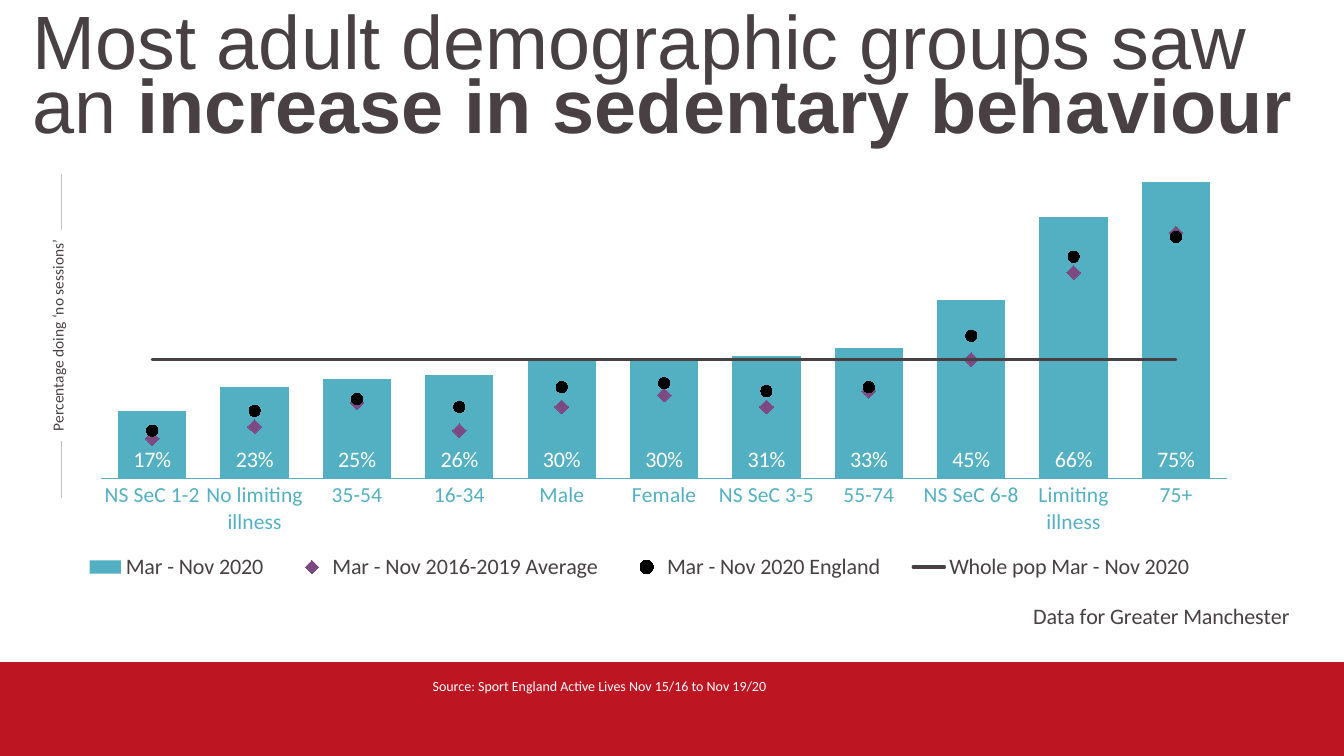
from dataclasses import dataclass

from lxml.etree import SubElement
from pptx import Presentation
from pptx.chart.data import CategoryChartData
from pptx.dml.color import RGBColor
from pptx.enum.chart import (XL_CHART_TYPE, XL_LABEL_POSITION, XL_LEGEND_POSITION,
                             XL_MARKER_STYLE, XL_TICK_LABEL_POSITION, XL_TICK_MARK)
from pptx.enum.shapes import MSO_CONNECTOR, MSO_SHAPE
from pptx.enum.text import MSO_ANCHOR, PP_ALIGN
from pptx.oxml import parse_xml
from pptx.oxml.ns import nsdecls, qn
from pptx.util import Pt


@dataclass(frozen=True)
class Theme:
    ink: RGBColor = RGBColor(0x48, 0x40, 0x43)
    teal: RGBColor = RGBColor(0x53, 0xB0, 0xC2)
    purple: RGBColor = RGBColor(0x7C, 0x49, 0x82)
    red: RGBColor = RGBColor(0xBD, 0x16, 0x22)
    rule: RGBColor = RGBColor(0xBF, 0xBF, 0xBF)
    black: RGBColor = RGBColor(0, 0, 0)
    white: RGBColor = RGBColor(0xFF, 0xFF, 0xFF)
    heading_font: str = "Arial"
    body_font: str = "Calibri"
    heading: Pt = Pt(54)
    chart_text: Pt = Pt(16)
    category: Pt = Pt(15.5)
    axis_note: Pt = Pt(11)
    source: Pt = Pt(10)


THEME = Theme()

CATEGORIES = ["NS SeC 1-2", "No limiting illness", "35-54", "16-34", "Male", "Female",
              "NS SeC 3-5", "55-74", "NS SeC 6-8", "Limiting illness", "75+"]
SERIES = {
    "Mar - Nov 2020": [0.17, 0.23, 0.25, 0.26, 0.3, 0.3, 0.31, 0.33, 0.45, 0.66, 0.75],
    "Mar - Nov 2016-2019 Average":
        [0.1, 0.13, 0.19, 0.12, 0.18, 0.21, 0.18, 0.22, 0.3, 0.52, 0.62],
    "Mar - Nov 2020 England":
        [0.12, 0.17, 0.2, 0.18, 0.23, 0.24, 0.22, 0.23, 0.36, 0.56, 0.61],
    "Whole pop Mar - Nov 2020": [0.3] * len(CATEGORIES),
}


def set_attributes(target, values):
    for name, value in values.items():
        setattr(target, name, value)


def set_font(font, size, color, name=THEME.body_font, bold=False):
    set_attributes(font, {"size": size, "name": name, "bold": bold})
    font.color.rgb = color
    font._element.set("kern", "1200")


def add_rectangle(slide, box, color):
    shape = slide.shapes.add_shape(MSO_SHAPE.RECTANGLE, *map(Pt, box))
    shape.shadow.inherit = False
    shape.fill.solid()
    shape.fill.fore_color.rgb = color
    shape.line.fill.background()
    return shape


def add_text(slide, box, runs, size, color, font_name, line_spacing):
    frame = slide.shapes.add_textbox(*map(Pt, box)).text_frame
    set_attributes(frame, {"word_wrap": True, "vertical_anchor": MSO_ANCHOR.TOP})
    paragraph = frame.paragraphs[0]
    paragraph.line_spacing = line_spacing
    for text, bold in runs:
        run = paragraph.add_run()
        run.text = text
        set_font(run.font, size, color, font_name, bold)


def add_axis_note(slide, text):
    # Thin rule, interrupted by the rotated label
    line = slide.shapes.add_connector(MSO_CONNECTOR.STRAIGHT, Pt(44), Pt(124), Pt(44), Pt(356))
    line.line.color.rgb = THEME.rule
    line.line.width = Pt(0.5)
    SubElement(line.element.spPr, qn("a:effectLst"))

    frame = add_rectangle(slide, (31, 164, 28, 151), THEME.white).text_frame
    set_attributes(frame, {"word_wrap": True, "vertical_anchor": MSO_ANCHOR.TOP})
    frame._txBody.bodyPr.set("vert", "vert270")
    paragraph = frame.paragraphs[0]
    paragraph.alignment = PP_ALIGN.CENTER
    run = paragraph.add_run()
    run.text = text
    set_font(run.font, THEME.axis_note, THEME.ink)


def place(element, **fractions):
    """Give a chart part a manual layout, in fractions of the chart."""
    for layout in element.findall(qn("c:layout")):
        element.remove(layout)
    is_plot = "plotArea" in element.tag
    target = '<c:layoutTarget val="inner"/>' if is_plot else ""
    modes = "".join(f'<c:{key}Mode val="edge"/>' for key in "xy")
    sizes = "".join(f'<c:{key} val="{value}"/>' for key, value in fractions.items())
    layout = parse_xml(f'<c:layout {nsdecls("c")}><c:manualLayout>{target}{modes}{sizes}'
                       '</c:manualLayout></c:layout>')
    if is_plot:
        element.insert(0, layout)
    else:
        element.find(qn("c:overlay")).addprevious(layout)


def move_to_line_plot(chart):
    """Move every series but the first onto a line plot sharing the axes."""
    bar_plot = chart.element.find(".//" + qn("c:barChart"))
    line_plot = parse_xml(f'<c:lineChart {nsdecls("c")}><c:grouping val="standard"/>'
                          '<c:varyColors val="0"/></c:lineChart>')
    for series in bar_plot.findall(qn("c:ser"))[1:]:
        for flag in series.findall(qn("c:invertIfNegative")):
            series.remove(flag)
        line_plot.append(series)
    SubElement(line_plot, qn("c:marker")).set("val", "1")
    for axis in bar_plot.findall(qn("c:axId")):
        SubElement(line_plot, qn("c:axId")).set("val", axis.get("val"))
    bar_plot.addnext(line_plot)


def format_bars(plot):
    set_attributes(plot, {"gap_width": 50, "overlap": -27, "vary_by_categories": False,
                          "has_data_labels": True})
    fill = plot.series[0].format.fill
    fill.solid()
    fill.fore_color.rgb = THEME.teal
    labels = plot.data_labels
    set_attributes(labels, {"show_value": True, "number_format": "0%",
                            "number_format_is_linked": False,
                            "position": XL_LABEL_POSITION.INSIDE_BASE})
    set_font(labels.font, THEME.chart_text, THEME.white)


def format_lines(plot):
    average, england, population = plot.series
    markers = [(average, XL_MARKER_STYLE.DIAMOND, 10, THEME.purple),
               (england, XL_MARKER_STYLE.CIRCLE, 8, THEME.black)]
    for series, style, size, color in markers:
        series.smooth = False
        series.format.line.fill.background()
        set_attributes(series.marker, {"style": style, "size": size})
        series.marker.format.fill.solid()
        series.marker.format.fill.fore_color.rgb = color
        series.marker.format.line.fill.background()
    population.smooth = False
    population.marker.style = XL_MARKER_STYLE.NONE
    line = population.format.line
    line.color.rgb = THEME.ink
    line.width = Pt(2.25)
    line._get_or_add_ln().set("cap", "rnd")


def add_sedentary_chart(slide):
    data = CategoryChartData(number_format="0%")
    data.categories = CATEGORIES
    for name, values in SERIES.items():
        data.add_series(name, values)
    chart = slide.shapes.add_chart(XL_CHART_TYPE.COLUMN_CLUSTERED,
                                   Pt(28), Pt(98), Pt(896), Pt(357), data).chart
    set_font(chart.font, THEME.source, THEME.ink)
    move_to_line_plot(chart)
    bars, lines = chart.plots
    format_bars(bars)
    format_lines(lines)

    # Axes
    set_attributes(chart.value_axis, {"minimum_scale": 0, "maximum_scale": 0.8,
                                      "has_major_gridlines": False, "visible": False})
    axis = chart.category_axis
    set_attributes(axis, {"major_tick_mark": XL_TICK_MARK.NONE,
                          "minor_tick_mark": XL_TICK_MARK.NONE,
                          "tick_label_position": XL_TICK_LABEL_POSITION.NEXT_TO_AXIS})
    set_font(axis.tick_labels.font, THEME.category, THEME.teal)
    axis.format.line.color.rgb = THEME.teal
    axis.format.line.width = Pt(0.75)

    # Caption and legend
    frame = chart.chart_title.text_frame
    frame.text = "Data for Greater Manchester"
    set_font(frame.paragraphs[0].runs[0].font, THEME.chart_text, THEME.ink)
    title = frame._txBody.getparent().getparent()
    title.find(qn("c:overlay")).set("val", "1")
    chart.has_legend = True
    set_attributes(chart.legend, {"position": XL_LEGEND_POSITION.BOTTOM,
                                  "include_in_layout": False})
    set_font(chart.legend.font, THEME.chart_text, THEME.ink)

    place(chart.element.find(".//" + qn("c:plotArea")), x=0.05, y=0.05, w=0.91, h=0.64)
    place(title, x=0.8, y=0.93)
    place(chart.legend._element, x=0.02, y=0.83, w=0.93, h=0.08)


def main():
    presentation = Presentation()
    set_attributes(presentation, {"slide_width": Pt(960), "slide_height": Pt(540)})
    slide = presentation.slides.add_slide(presentation.slide_layouts[6])

    # Footer band and heading
    add_rectangle(slide, (0, 473, 960, 67), THEME.red)
    add_text(slide, (16, 10, 930, 57),
             [("Most adult demographic groups saw an ", False),
              ("increase in sedentary behaviour", True)],
             THEME.heading, THEME.ink, THEME.heading_font, 0.7)
    add_text(slide, (302, 482, 426, 19),
             [("Source: Sport England Active Lives Nov 15/16 to Nov 19/20", False)],
             THEME.source, THEME.white, THEME.body_font, 0.9)

    # Chart with its axis note
    add_axis_note(slide, "Percentage doing ‘no sessions’")
    add_sedentary_chart(slide)
    presentation.save("out.pptx")


if __name__ == "__main__":
    main()
